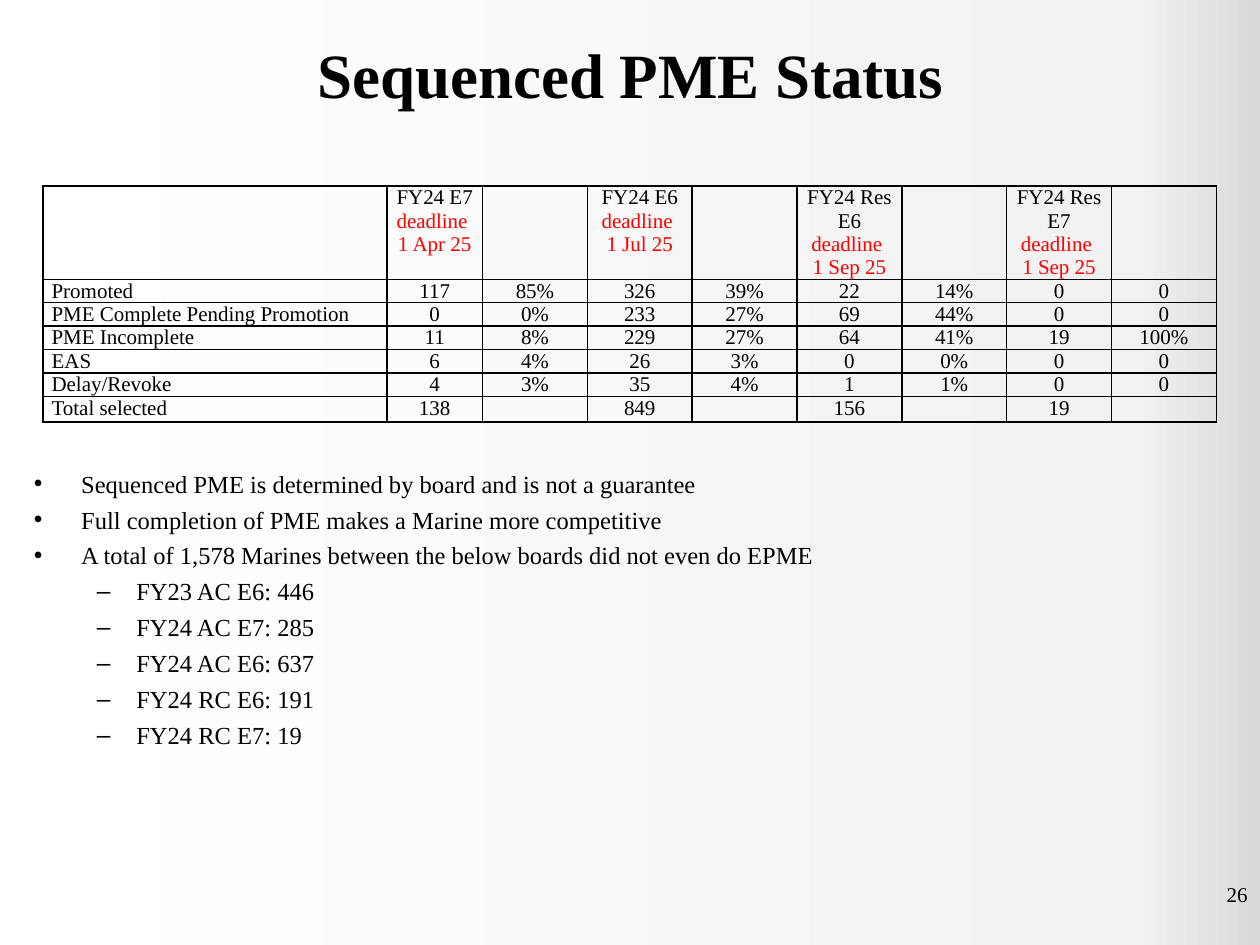
from copy import deepcopy

from lxml import etree
from pptx import Presentation
from pptx import util as u
from pptx.dml import color
from pptx.enum import text
from pptx.oxml import ns

FONT = "Times New Roman"
BLACK = "000000"
RED = "FF0000"
BACKGROUND_STOPS = [(0, "FFFFFF"), (0.9, "F2F2F2"), (1, "D9D9D9")]
COLUMN_WIDTHS = [196.6, 54.7] + [59.9] * 7
HEADER_HEIGHT = 53.2
ROW_HEIGHT = 13.4
STATUS_ROWS = [
    ["", "FY24 E7\ndeadline \n1 Apr 25", "", "FY24 E6\ndeadline \n1 Jul 25", "",
     "FY24 Res E6\ndeadline \n1 Sep 25", "", "FY24 Res E7\ndeadline \n1 Sep 25", ""],
    ["Promoted", "117", "85%", "326", "39%", "22", "14%", "0", "0"],
    ["PME Complete Pending Promotion", "0", "0%", "233", "27%", "69", "44%", "0", "0"],
    ["PME Incomplete", "11", "8%", "229", "27%", "64", "41%", "19", "100%"],
    ["EAS", "6", "4%", "26", "3%", "0", "0%", "0", "0"],
    ["Delay/Revoke", "4", "3%", "35", "4%", "1", "1%", "0", "0"],
    ["Total selected", "138", "", "849", "", "156", "", "19", ""],
]
NOTES = [
    (0, "Sequenced PME is determined by board and is not a guarantee"),
    (0, "Full completion of PME makes a Marine more competitive"),
    (0, "A total of 1,578 Marines between the below boards did not even do EPME"),
    (1, "FY23 AC E6: 446"),
    (1, "FY24 AC E7: 285"),
    (1, "FY24 AC E6: 637"),
    (1, "FY24 RC E6: 191"),
    (1, "FY24 RC E7: 19"),
]
BULLETS = [("•", 27, -27), ("–", 58.5, -22.5)]


def rgb(value):
    return color.RGBColor.from_string(value)


def place(shape, left, top, width, height):
    shape.left, shape.top = u.Pt(left), u.Pt(top)
    shape.width, shape.height = u.Pt(width), u.Pt(height)


def format_runs(paragraph, size, fill=BLACK, bold=False):
    for run in paragraph.runs:
        run.font.name = FONT
        run.font.size = u.Pt(size)
        run.font.bold = bold
        run.font.color.rgb = rgb(fill)


def paint_background(slide):
    fill = slide.background.fill
    fill.gradient()
    fill.gradient_angle = 0
    stop_list = next(slide.element.iter(ns.qn("a:gsLst")))
    stop_list.append(deepcopy(stop_list[-1]))
    for stop, (position, value) in zip(fill.gradient_stops, BACKGROUND_STOPS):
        stop.position = position
        stop.color.rgb = rgb(value)


def add_title(slide):
    title = slide.shapes.title
    place(title, 29.5, 0, 661.7, 84.2)
    frame = title.text_frame
    frame.text = "Sequenced PME Status"
    frame.vertical_anchor = text.MSO_ANCHOR.MIDDLE
    frame.paragraphs[0].alignment = text.PP_ALIGN.CENTER
    format_runs(frame.paragraphs[0], 36, bold=True)


def add_borders(cell):
    properties = cell._tc.get_or_add_tcPr()
    for index, side in enumerate(("lnL", "lnR", "lnT", "lnB")):
        line = etree.Element(ns.qn(f"a:{side}"), w=str(u.Pt(1)))
        fill = etree.SubElement(line, ns.qn("a:solidFill"))
        etree.SubElement(fill, ns.qn("a:srgbClr"), val=BLACK)
        properties.insert(index, line)


def fill_cell(cell, content, row, column):
    cell.fill.background()
    add_borders(cell)
    cell.margin_left = cell.margin_right = u.Pt(5)
    cell.margin_top = cell.margin_bottom = 0
    if row and column == 2:
        cell.vertical_anchor = text.MSO_ANCHOR.BOTTOM
    cell.text_frame.text = content
    for index, paragraph in enumerate(cell.text_frame.paragraphs):
        if column:
            paragraph.alignment = text.PP_ALIGN.CENTER
        format_runs(paragraph, 12, RED if index else BLACK)
        if not content:
            paragraph._p.get_or_add_endParaRPr().set("sz", "1200")


def add_status_table(slide):
    height = HEADER_HEIGHT + ROW_HEIGHT * (len(STATUS_ROWS) - 1)
    table = slide.shapes.add_table(
        len(STATUS_ROWS), len(COLUMN_WIDTHS),
        u.Pt(24.5), u.Pt(106.3), u.Pt(sum(COLUMN_WIDTHS)), u.Pt(height)).table
    table.first_row = table.horz_banding = False
    for column, width in zip(table.columns, COLUMN_WIDTHS):
        column.width = u.Pt(width)
    for row, values in enumerate(STATUS_ROWS):
        table.rows[row].height = u.Pt(ROW_HEIGHT if row else HEADER_HEIGHT)
        for column, content in enumerate(values):
            fill_cell(table.cell(row, column), content, row, column)


def add_page_number(slide):
    shape = slide.shapes.add_textbox(u.Pt(552.2), u.Pt(500.4), u.Pt(167.8), u.Pt(28.8))
    frame = shape.text_frame
    frame.word_wrap = True
    frame.text = "26"
    frame.paragraphs[0].alignment = text.PP_ALIGN.RIGHT
    format_runs(frame.paragraphs[0], 12)


def add_notes_list(slide):
    body = slide.placeholders[1]
    place(body, 12.2, 264.2, 612, 257.8)
    frame = body.text_frame
    frame.text = "\n".join(content for _, content in NOTES)
    for index, (paragraph, (level, _)) in enumerate(zip(frame.paragraphs, NOTES)):
        mark, margin, indent = BULLETS[level]
        paragraph.level = level
        paragraph.space_before = u.Pt(3.7 if index else 0)
        properties = paragraph._p.get_or_add_pPr()
        properties.set("marL", str(u.Pt(margin)))
        properties.set("indent", str(u.Pt(indent)))
        etree.SubElement(properties, ns.qn("a:buChar"), char=mark)
        format_runs(paragraph, 14)


def main():
    presentation = Presentation()
    presentation.slide_width, presentation.slide_height = u.Pt(720), u.Pt(540)
    slide = presentation.slides.add_slide(presentation.slide_layouts[1])
    paint_background(slide)
    add_title(slide)
    add_status_table(slide)
    add_page_number(slide)
    add_notes_list(slide)
    presentation.save("out.pptx")


if __name__ == "__main__":
    main()
